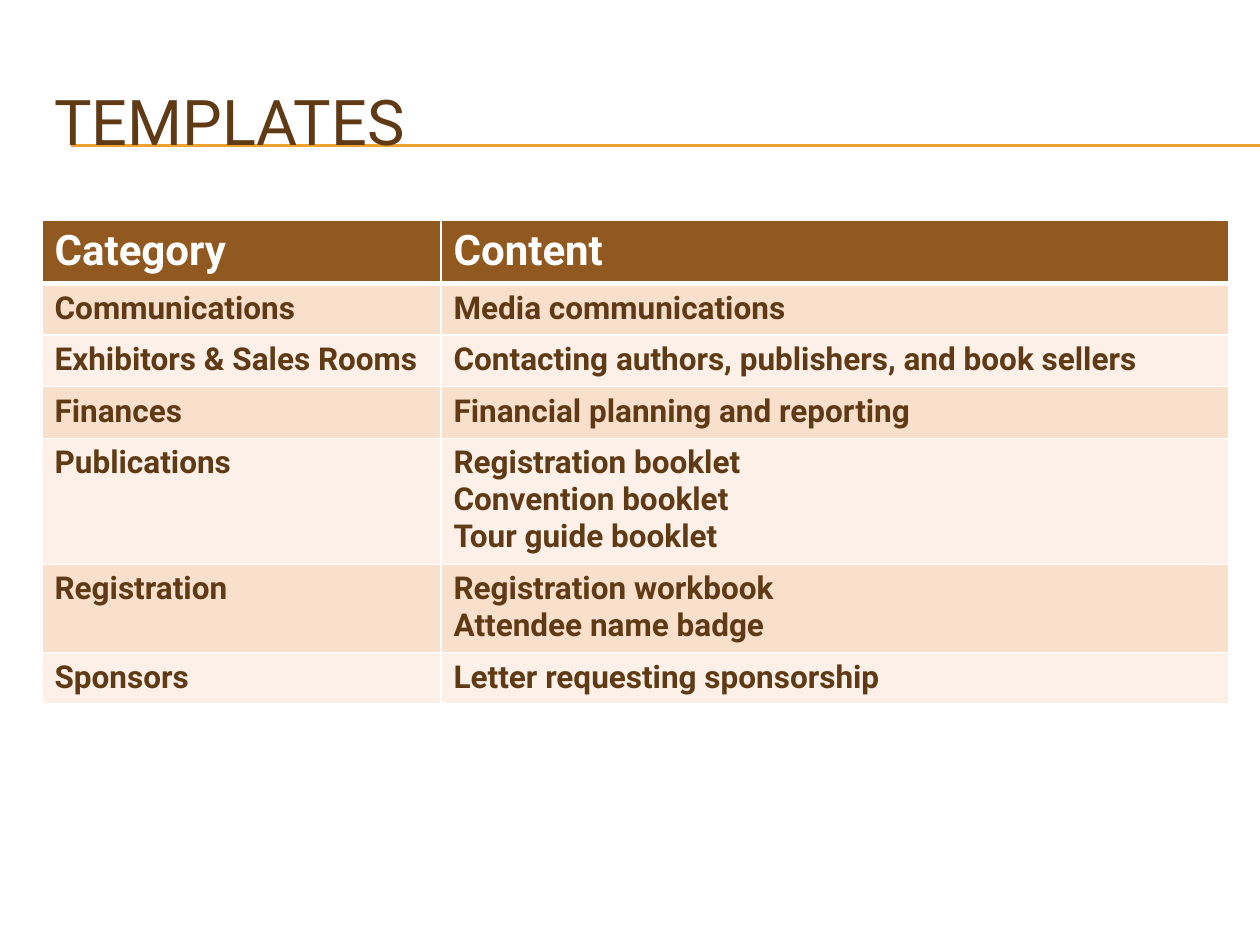
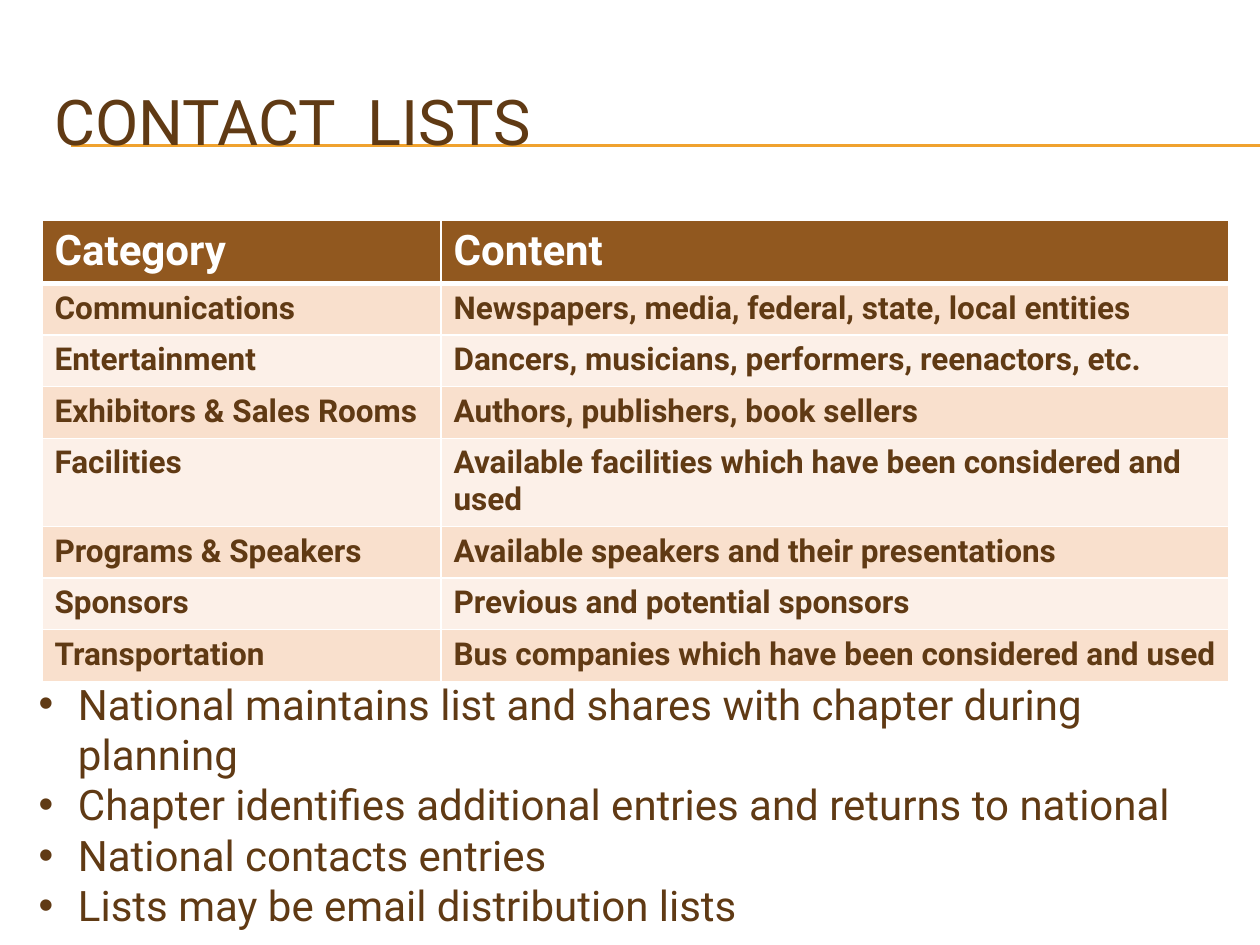
from dataclasses import dataclass

from lxml.etree import SubElement
from pptx import Presentation
from pptx.dml.color import RGBColor
from pptx.enum.shapes import MSO_CONNECTOR as Connector
from pptx.enum.text import MSO_ANCHOR as Anchor
from pptx.oxml.ns import qn
from pptx.util import Pt


@dataclass(frozen=True)
class Theme:
    font: str = "Roboto"
    text: str = "603A14"
    accent: str = "F0A22E"
    header: str = "91581F"
    white: str = "FFFFFF"
    bands: tuple = ("F9E0CD", "FCF0E8")
    title_size: int = 36
    large_size: int = 24
    cell_size: int = 18


WIDTH, HEIGHT = 720, 540
LEFT = 24
COLUMN_WIDTHS = (228, 450)
ROW_HEIGHT = 29.5
TABLE_TOP = 126
RULE_LEFT = 40.5
RULE_TOPS = (82.8, 83.5)
BULLET_INDENT = 22.5

HEADINGS = ("Category", "Content")
TEMPLATES = (
    ("Communications", "Media communications"),
    ("Exhibitors & Sales Rooms", "Contacting authors, publishers, and book sellers"),
    ("Finances", "Financial planning and reporting"),
    ("Publications", "Registration booklet\nConvention booklet\nTour guide booklet"),
    ("Registration", "Registration workbook\nAttendee name badge"),
    ("Sponsors", "Letter requesting sponsorship"),
)
CONTACTS = (
    ("Communications", "Newspapers, media, federal, state, local entities"),
    ("Entertainment", "Dancers, musicians, performers, reenactors, etc."),
    ("Exhibitors & Sales Rooms", "Authors, publishers, book sellers"),
    ("Facilities", "Available facilities which have been considered and used"),
    ("Programs & Speakers", "Available speakers and their presentations"),
    ("Sponsors", "Previous and potential sponsors"),
    ("Transportation", "Bus companies which have been considered and used"),
)
CONTACT_STEPS = (
    "National maintains list and shares with chapter during planning",
    "Chapter identifies additional entries and returns to national",
    "National contacts entries",
    "Lists may be email distribution lists",
)


class Deck:
    def __init__(self, theme):
        self.theme = theme
        self.presentation = Presentation()
        self.presentation.slide_width = Pt(WIDTH)
        self.presentation.slide_height = Pt(HEIGHT)
        self.slide = None

    def add_slide(self, title, word_gap=0):
        """Start a slide with its rules and title; word_gap widens the title's spaces."""
        self.slide = self.presentation.slides.add_slide(self.presentation.slide_layouts[6])
        for top in RULE_TOPS:
            self.add_rule(top)
        text_frame = self.add_text_box(LEFT, 36, 684, 66)
        text_frame.vertical_anchor = Anchor.MIDDLE
        paragraph = text_frame.paragraphs[0]
        first, *others = title.split()
        paragraph.add_run().text = first
        for word in others:
            space = paragraph.add_run()
            space.text = " "
            space.font._element.set("spc", str(word_gap * 100))
            paragraph.add_run().text = word
        self.format_runs(text_frame, self.theme.title_size)

    def add_rule(self, top):
        rule = self.slide.shapes.add_connector(
            Connector.STRAIGHT, Pt(RULE_LEFT), Pt(top), Pt(WIDTH), Pt(top))
        rule.line.color.rgb = RGBColor.from_string(self.theme.accent)
        rule.line.width = Pt(0.75)
        SubElement(rule._element.spPr, qn("a:effectLst"))

    def add_text_box(self, left, top, width, height):
        box = self.slide.shapes.add_textbox(Pt(left), Pt(top), Pt(width), Pt(height))
        box.text_frame.word_wrap = True
        return box.text_frame

    def format_runs(self, text_frame, size, color=None, bold=False):
        for paragraph in text_frame.paragraphs:
            for run in paragraph.runs:
                run.font.name = self.theme.font
                run.font.size = Pt(size)
                run.font.bold = bold
                run.font.color.rgb = RGBColor.from_string(color or self.theme.text)

    def add_table(self, body):
        theme = self.theme
        rows = (HEADINGS, *body)
        table = self.slide.shapes.add_table(
            len(rows), len(HEADINGS), Pt(LEFT), Pt(TABLE_TOP),
            Pt(sum(COLUMN_WIDTHS)), Pt(ROW_HEIGHT * len(rows))).table
        for column, width in zip(table.columns, COLUMN_WIDTHS):
            column.width = Pt(width)
        for index, texts in enumerate(rows):
            table.rows[index].height = Pt(ROW_HEIGHT)
            if index == 0:
                fill, size, color = theme.header, theme.large_size, theme.white
            else:
                fill, size, color = theme.bands[(index - 1) % 2], theme.cell_size, theme.text
            for cell, text in zip(table.rows[index].cells, texts):
                self.add_borders(cell, top=3 if index == 1 else 1, bottom=3 if index == 0 else 1)
                cell.fill.solid()
                cell.fill.fore_color.rgb = RGBColor.from_string(fill)
                cell.text_frame.text = text
                self.format_runs(cell.text_frame, size, color, bold=True)

    def add_borders(self, cell, top, bottom):
        properties = cell._tc.get_or_add_tcPr()
        for side, width in (("L", 1), ("R", 1), ("T", top), ("B", bottom)):
            line = SubElement(properties, qn(f"a:ln{side}"), w=str(Pt(width)))
            fill = SubElement(line, qn("a:solidFill"))
            SubElement(fill, qn("a:srgbClr"), val=self.theme.white)

    def add_bullets(self, items, left, top, width, height):
        text_frame = self.add_text_box(left, top, width, height)
        text_frame.text = "\n".join(items)
        for paragraph in text_frame.paragraphs:
            properties = paragraph._p.get_or_add_pPr()
            properties.set("marL", str(Pt(BULLET_INDENT)))
            properties.set("indent", str(-Pt(BULLET_INDENT)))
            SubElement(properties, qn("a:buFont"), typeface="Arial")
            SubElement(properties, qn("a:buChar"), char="•")
        self.format_runs(text_frame, self.theme.large_size)


def main():
    deck = Deck(Theme())
    deck.add_slide("TEMPLATES")
    deck.add_table(TEMPLATES)
    deck.add_slide("CONTACT LISTS", word_gap=9)
    deck.add_table(CONTACTS)
    deck.add_bullets(CONTACT_STEPS, 15, 384, 690, 124)
    deck.presentation.save("out.pptx")


if __name__ == "__main__":
    main()
